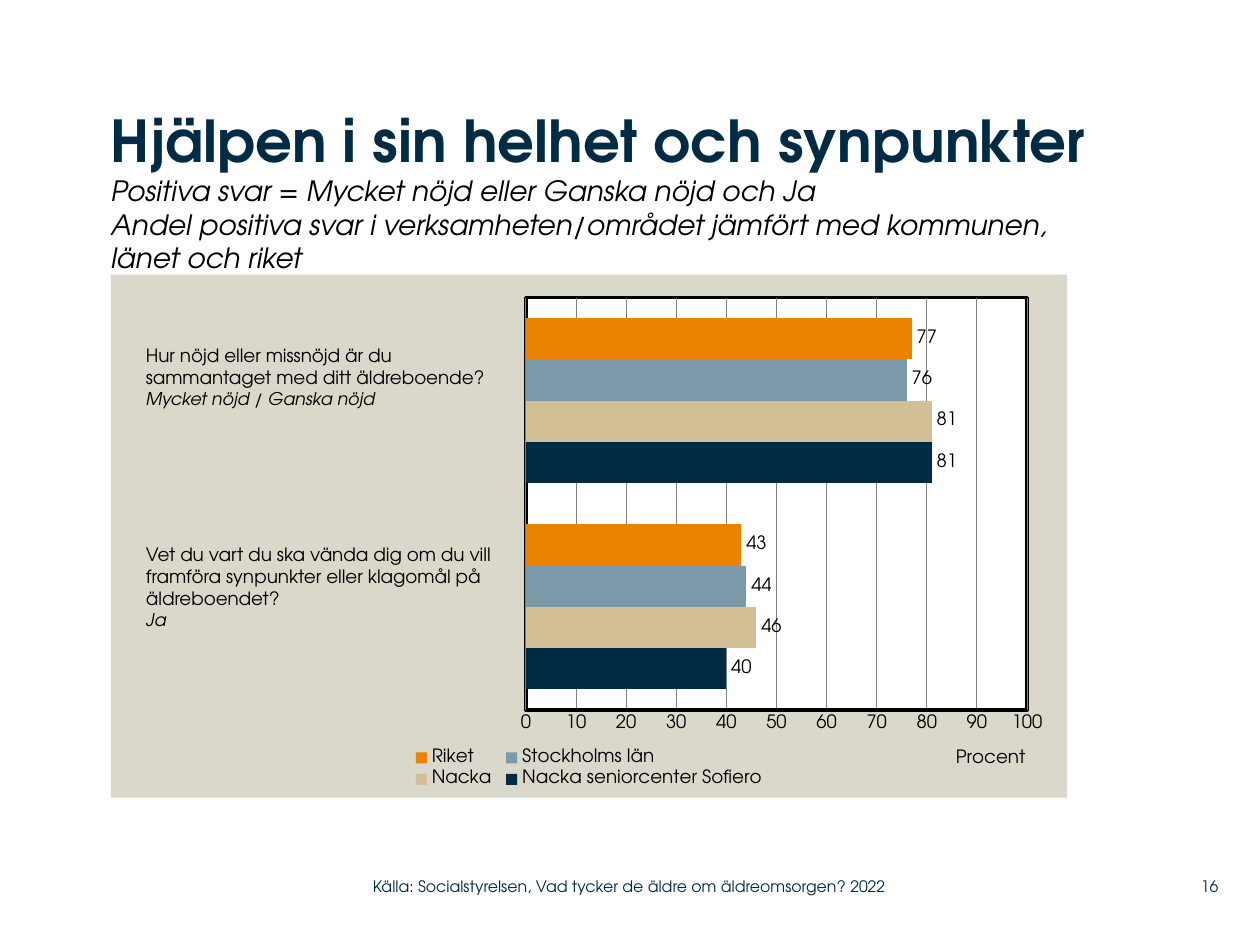
import dataclasses

import pptx
import pptx.chart.data
import pptx.dml.color
import pptx.enum.chart
import pptx.enum.text
import pptx.oxml
import pptx.oxml.ns
import pptx.util
from pptx.util import Inches

FONT = "TeX Gyre Adventor"
NAVY, BLACK, WHITE, BEIGE, GREY = "002B45", "000000", "FFFFFF", "DAD7CB", "808080"
qn = pptx.oxml.ns.qn


@dataclasses.dataclass
class Line:
    text: str
    size: float
    color: str = BLACK
    bold: bool = False
    italic: bool = False


@dataclasses.dataclass
class TextBlock:
    left: float
    top: float
    width: float
    height: float
    lines: list[Line]
    inset: tuple[float, float] = (0, 0)
    middle: bool = False
    right: bool = False


@dataclasses.dataclass
class Series:
    name: str
    values: tuple[int, int]
    color: str


def rgb(color: str) -> pptx.dml.color.RGBColor:
    return pptx.dml.color.RGBColor.from_string(color)


def set_font(font, size: float, color: str = BLACK, bold: bool = False, italic: bool = False) -> None:
    font.name = FONT
    font.size = pptx.util.Pt(size)
    font.color.rgb = rgb(color)
    font.bold = bold
    font.italic = italic


def add_text(s, block: TextBlock) -> None:
    sp = s.shapes.add_textbox(Inches(block.left), Inches(block.top), Inches(block.width), Inches(block.height))
    tf = sp.text_frame
    tf.word_wrap = True
    tf.margin_left = tf.margin_right = Inches(block.inset[0])
    tf.margin_top = tf.margin_bottom = Inches(block.inset[1])
    anchor = pptx.enum.text.MSO_ANCHOR
    tf.vertical_anchor = anchor.MIDDLE if block.middle else anchor.TOP
    tf.text = "\n".join(line.text for line in block.lines)
    for p, line in zip(tf.paragraphs, block.lines):
        if block.right:
            p.alignment = pptx.enum.text.PP_ALIGN.RIGHT
        for r in p.runs:
            set_font(r.font, line.size, line.color, line.bold, line.italic)


def make_layout(inner: bool = False, **place: float):
    """Manual chart layout; x, y, w and h are fractions of the chart."""
    target = '<c:layoutTarget val="inner"/>' if inner else ""
    modes = "".join(f'<c:{k}Mode val="edge"/>' for k in "xy")
    sizes = "".join(f'<c:{k} val="{v}"/>' for k, v in place.items())
    ns = pptx.oxml.ns.nsdecls("c")
    return pptx.oxml.parse_xml(
        f"<c:layout {ns}><c:manualLayout>{target}{modes}{sizes}</c:manualLayout></c:layout>")


def set_layout(parent, layout) -> None:
    for old in parent.findall(qn("c:layout")):
        parent.remove(old)
    overlay = parent.find(qn("c:overlay"))
    if overlay is None:
        parent.insert(0, layout)
    else:
        overlay.addprevious(layout)


def make_area(fill: str, line: str) -> object:
    ns = pptx.oxml.ns.nsdecls("c", "a")
    return pptx.oxml.parse_xml(
        f'<c:spPr {ns}><a:solidFill><a:srgbClr val="{fill}"/></a:solidFill>{line}</c:spPr>')


def add_bar_chart(s, series: list[Series]) -> None:
    data = pptx.chart.data.CategoryChartData()
    data.categories = ["1", "2"]
    for item in series:
        data.add_series(item.name, item.values)
    enums = pptx.enum.chart
    chart = s.shapes.add_chart(enums.XL_CHART_TYPE.BAR_CLUSTERED, Inches(0.88), Inches(2.18),
                               Inches(7.59), Inches(4.15), data).chart
    set_font(chart.font, 10.5)
    chart.has_title = False

    # Bars and value labels
    plot = chart.plots[0]
    plot.gap_width = 100
    plot.overlap = 0
    plot.vary_by_categories = False
    for bars, item in zip(plot.series, series):
        bars.format.fill.solid()
        bars.format.fill.fore_color.rgb = rgb(item.color)
        bars.data_labels.show_value = True
        bars.data_labels.position = enums.XL_LABEL_POSITION.OUTSIDE_END
        set_font(bars.data_labels.font, 10.5)

    # Axes
    chart.category_axis.visible = False
    axis = chart.value_axis
    axis.minimum_scale, axis.maximum_scale, axis.major_unit = 0, 100, 10
    axis.major_tick_mark = axis.minor_tick_mark = enums.XL_TICK_MARK.NONE
    axis.format.line.color.rgb = rgb(BLACK)
    axis.format.line.width = pptx.util.Pt(2)
    axis.major_gridlines.format.line.color.rgb = rgb(GREY)
    axis.major_gridlines.format.line.width = pptx.util.Pt(0.5)
    tf = axis.axis_title.text_frame
    tf.text = "Procent"
    set_font(tf.paragraphs[0].runs[0].font, 10.5)
    set_layout(axis.axis_title.element if hasattr(axis.axis_title, "element") else axis.axis_title._element,
               make_layout(x=0.88, y=0.9))

    # Legend
    chart.has_legend = True
    legend = chart.legend
    legend.position = enums.XL_LEGEND_POSITION.BOTTOM
    legend.include_in_layout = False
    set_font(legend.font, 10.5)
    set_layout(chart._chartSpace.find(".//" + qn("c:legend")), make_layout(x=0.31, y=0.9, w=0.38, h=0.09))

    # Plot and chart backgrounds
    area = chart._chartSpace.find(".//" + qn("c:plotArea"))
    set_layout(area, make_layout(True, x=0.434, y=0.044, w=0.524, h=0.789))
    border = f'<a:ln w="25400"><a:solidFill><a:srgbClr val="{BLACK}"/></a:solidFill></a:ln>'
    area.append(make_area(WHITE, border))
    chart._chartSpace.find(qn("c:chart")).addnext(make_area(BEIGE, "<a:ln><a:noFill/></a:ln>"))


SERIES = [
    Series("Nacka seniorcenter Sofiero", (40, 81), NAVY),
    Series("Nacka", (46, 81), "D3BF96"),
    Series("Stockholms län", (44, 76), "7D9AAA"),
    Series("Riket", (43, 77), "E98300"),
]
HEADING = TextBlock(0.88, 0.83, 7.79, 1.34, [
    Line("Hjälpen i sin helhet och synpunkter", 33, NAVY, bold=True),
    Line("Positiva svar = Mycket nöjd eller Ganska nöjd och Ja", 16, italic=True),
    Line("Andel positiva svar i verksamheten/området jämfört med kommunen, länet och riket", 16, italic=True),
])
QUESTIONS = [
    TextBlock(1.06, 2.68, 3.1, 0.81, [
        Line("Hur nöjd eller missnöjd är du", 10.5),
        Line("sammantaget med ditt äldreboende?", 10.5),
        Line("Mycket nöjd / Ganska nöjd", 10, italic=True),
    ], inset=(0.1, 0.05)),
    TextBlock(1.06, 4.26, 3.05, 0.81, [
        Line("Vet du vart du ska vända dig om du vill framföra synpunkter eller klagomål på äldreboendet?", 10.5),
        Line("Ja", 10, italic=True),
    ], inset=(0.1, 0.05)),
]
FOOTER = [
    TextBlock(2.96, 6.89, 4.43, 0.29,
              [Line("Källa: Socialstyrelsen, Vad tycker de äldre om äldreomsorgen? 2022", 9, NAVY)], middle=True),
    TextBlock(9.2, 6.89, 0.47, 0.29, [Line("16", 9, NAVY)], middle=True, right=True),
]


def main() -> None:
    prs = pptx.Presentation()
    prs.slide_width, prs.slide_height = Inches(10), Inches(7.5)
    s = prs.slides.add_slide(prs.slide_layouts[6])
    add_text(s, HEADING)
    add_bar_chart(s, SERIES)
    for block in QUESTIONS + FOOTER:
        add_text(s, block)
    prs.save("out.pptx")


if __name__ == "__main__":
    main()
